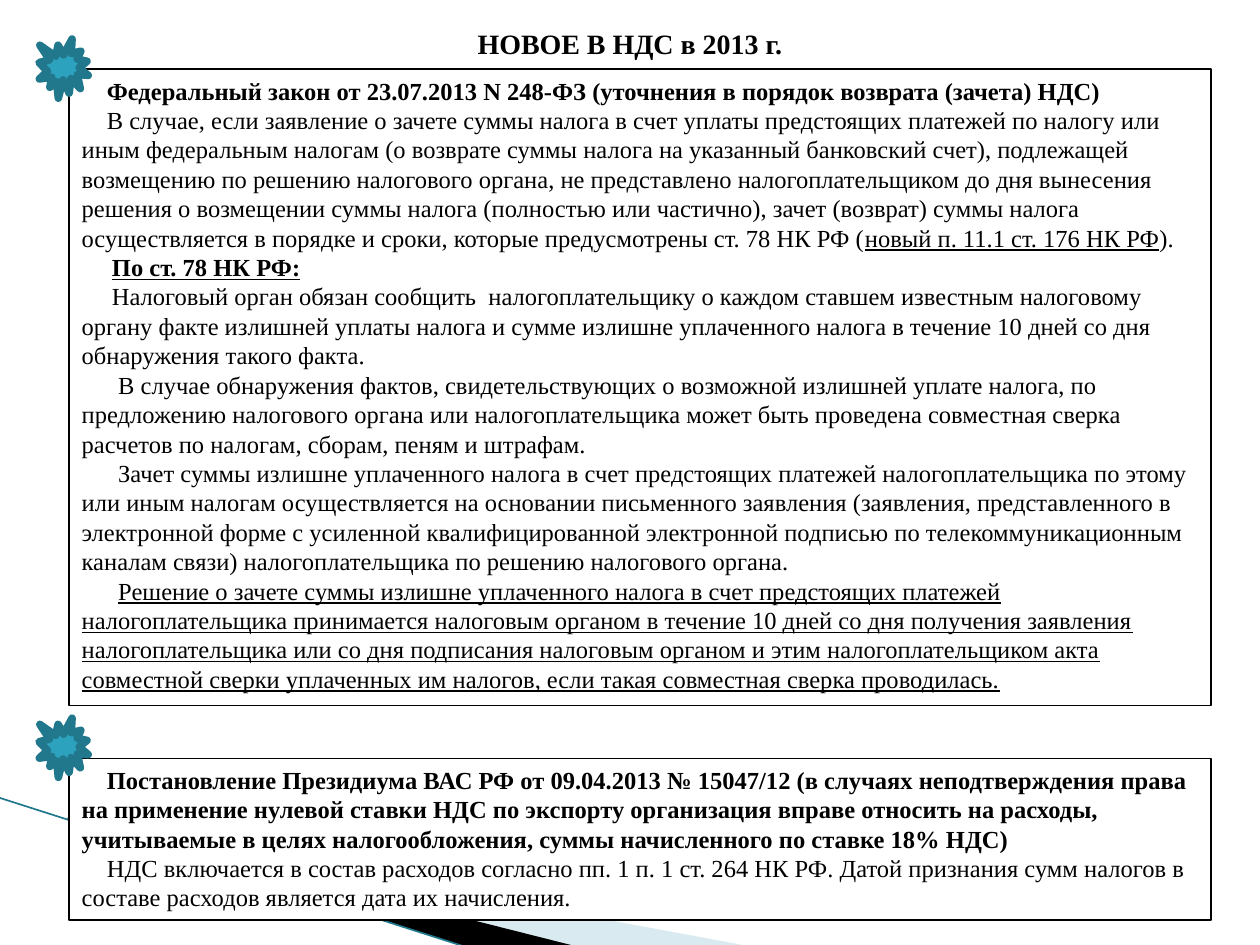
"""Build the slide on the 2013 VAT changes."""
import pptx
import pptx.dml.color
import pptx.enum.shapes
import pptx.enum.text
import pptx.oxml
import pptx.oxml.ns
import pptx.util
from pptx.util import Inches


def color(value):
    return pptx.dml.color.RGBColor.from_string(value)


def write(frame, paragraphs, size, align):
    frame.word_wrap = True
    frame.auto_size = pptx.enum.text.MSO_AUTO_SIZE.SHAPE_TO_FIT_TEXT
    frame.vertical_anchor = pptx.enum.text.MSO_ANCHOR.TOP
    for index, (indent, bold, spans) in enumerate(paragraphs):
        para = frame.add_paragraph() if index else frame.paragraphs[0]
        para.alignment = align
        if indent:
            properties = para._p.get_or_add_pPr()
            properties.set("marL", "0")
            properties.set("indent", str(Inches(indent)))
        para.font.name = "Times New Roman"
        para.font.size = pptx.util.Pt(size)
        para.font.bold = bold
        para.font.color.rgb = color("000000")
        for text, underline in spans:
            span = para.add_run()
            span.text = text
            if underline:
                span.font.underline = True


LAW = [
    (0.2, True, [("Федеральный закон от 23.07.2013 N 248-ФЗ (уточнения в порядок возврата (зачета) НДС)", False)]),
    (0.2, False, [
        ("В случае, если заявление о зачете суммы налога в счет уплаты предстоящих платежей по налогу или "
         "иным федеральным налогам (о возврате суммы налога на указанный банковский счет), подлежащей "
         "возмещению по решению налогового органа, не представлено налогоплательщиком до дня вынесения "
         "решения о возмещении суммы налога (полностью или частично), зачет (возврат) суммы налога "
         "осуществляется в порядке и сроки, которые предусмотрены ст. 78 НК РФ (", False),
        ("новый п. 11.1 ст. 176 НК РФ", True),
        (").", False)]),
    (0.24, True, [("По ст. 78 НК РФ:", True)]),
    (0.24, False, [
        ("Налоговый орган обязан сообщить  налогоплательщику о каждом ставшем известным налоговому "
         "органу факте излишней уплаты налога и сумме излишне уплаченного налога в течение 10 дней со дня "
         "обнаружения такого факта.", False)]),
    (0.29, False, [
        ("В случае обнаружения фактов, свидетельствующих о возможной излишней уплате налога, по "
         "предложению налогового органа или налогоплательщика может быть проведена совместная сверка "
         "расчетов по налогам, сборам, пеням и штрафам.", False)]),
    (0.29, False, [
        ("Зачет суммы излишне уплаченного налога в счет предстоящих платежей налогоплательщика по этому "
         "или иным налогам осуществляется на основании письменного заявления (заявления, представленного в "
         "электронной форме с усиленной квалифицированной электронной подписью по телекоммуникационным "
         "каналам связи) налогоплательщика по решению налогового органа.", False)]),
    (0.29, False, [
        ("Решение о зачете суммы излишне уплаченного налога в счет предстоящих платежей "
         "налогоплательщика принимается налоговым органом в течение 10 дней со дня получения заявления "
         "налогоплательщика или со дня подписания налоговым органом и этим налогоплательщиком акта "
         "совместной сверки уплаченных им налогов, если такая совместная сверка проводилась.", True)]),
]
RULING = [
    (0.2, True, [
        ("Постановление Президиума ВАС РФ от 09.04.2013 № 15047/12 (в случаях неподтверждения права "
         "на применение нулевой ставки НДС по экспорту организация вправе относить на расходы, "
         "учитываемые в целях налогообложения, суммы начисленного по ставке 18% НДС)", False)]),
    (0.2, False, [
        ("НДС включается в состав расходов согласно пп. 1 п. 1 ст. 264 НК РФ. Датой признания сумм налогов в "
         "составе расходов является дата их начисления.", False)]),
]

deck = pptx.Presentation()
deck.slide_width, deck.slide_height = Inches(10), Inches(7.5)
page = deck.slides.add_slide(deck.slide_layouts[6])
shapes = page.shapes
kinds = pptx.enum.shapes.MSO_SHAPE
aligns = pptx.enum.text.PP_ALIGN

for fill, alpha, points in [
    ("A0CBDC", 40, [(0.55, 6.51), (5.95, 7.51), (4.56, 7.51), (0.55, 6.5)]),
    ("000000", 100, [(0.53, 6.49), (4.57, 7.51), (3.72, 7.52), (0.54, 6.5)]),
]:
    corners = [(Inches(x), Inches(y)) for x, y in points]
    builder = shapes.build_freeform(*corners[0])
    builder.add_line_segments(corners[1:], close=True)
    wedge = builder.convert_to_shape()
    wedge.shadow.inherit = False
    wedge.fill.solid()
    wedge.fill.fore_color.rgb = color(fill)
    wedge.line.fill.background()
    if alpha < 100:
        tint = wedge._element.spPr.find(".//" + pptx.oxml.ns.qn("a:srgbClr"))
        tint.append(pptx.oxml.parse_xml(
            f'<a:alpha {pptx.oxml.ns.nsdecls("a")} val="{alpha * 1000}"/>'))

edge = shapes.add_connector(pptx.enum.shapes.MSO_CONNECTOR.STRAIGHT,
                            Inches(-0.01), Inches(6.33), Inches(3.71), Inches(7.52))
edge.line.color.rgb = color("21788D")
edge.line.width = pptx.util.Pt(0.95)
edge._element.spPr.append(pptx.oxml.parse_xml(f'<a:effectLst {pptx.oxml.ns.nsdecls("a")}/>'))

title = shapes.add_textbox(Inches(0.47), Inches(0.16), Inches(9.06), Inches(0.37))
write(title.text_frame, [(0, True, [("НОВОЕ В НДС в 2013 г.", False)])], 16, aligns.CENTER)

for top, height, fill, paragraphs in [(0.55, 5.05, None, LAW), (6.02, 1.28, "FFFFFF", RULING)]:
    box = shapes.add_shape(kinds.RECTANGLE, Inches(0.55), Inches(top), Inches(9.06), Inches(height))
    box.shadow.inherit = False
    if fill:
        box.fill.solid()
        box.fill.fore_color.rgb = color(fill)
    else:
        box.fill.background()
    box.line.color.rgb = color("000000")
    box.line.width = pptx.util.Pt(1)
    write(box.text_frame, paragraphs, 14, aligns.LEFT)

for top in (0.31, 5.7):
    burst = shapes.add_shape(kinds.EXPLOSION1, Inches(0.31), Inches(top), Inches(0.39), Inches(0.47))
    burst.shadow.inherit = False
    burst.fill.solid()
    burst.fill.fore_color.rgb = color("2DA2BF")
    burst.line.color.rgb = color("21788D")
    burst.line.width = pptx.util.Pt(4.33)

deck.save("out.pptx")
